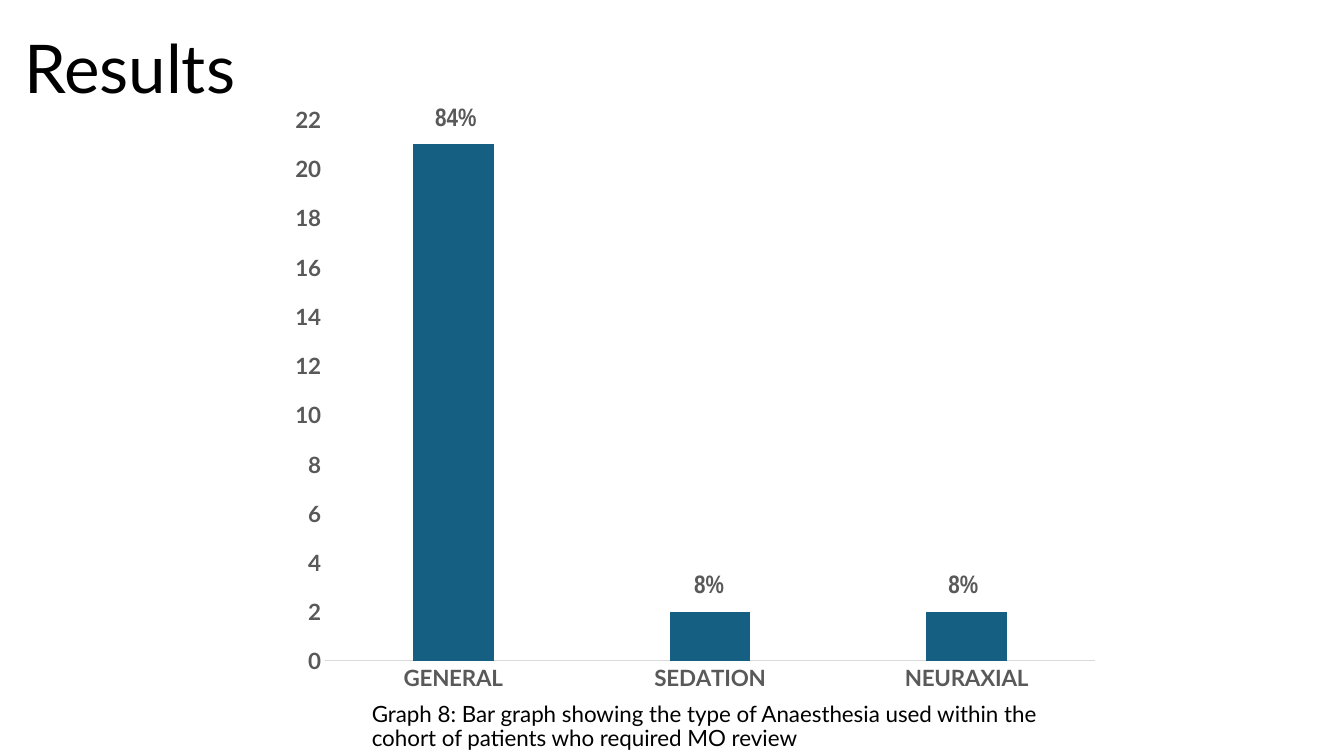
from lxml import etree
from pptx import Presentation
from pptx.chart.data import CategoryChartData
from pptx.dml.color import RGBColor
from pptx.enum.chart import XL_CHART_TYPE as CHART, XL_TICK_MARK as TICK
from pptx.enum.text import MSO_ANCHOR as ANCHOR, MSO_AUTO_SIZE as FIT, PP_ALIGN as ALIGN
from pptx.oxml import parse_xml
from pptx.util import Pt

GREY = "595959"
C_NS = "http://schemas.openxmlformats.org/drawingml/2006/chart"


def rgb(value):
    return RGBColor.from_string(value)


def style(font, size, color, name="Lato", bold=False):
    font.name = name
    font.size = Pt(size)
    font.bold = bold
    font.color.rgb = rgb(color)


def place(sp, x, y, w, h):
    sp.left, sp.top, sp.width, sp.height = Pt(x), Pt(y), Pt(w), Pt(h)


def write(sp, text, size, color, name="Lato", bold=False, anchor=ANCHOR.TOP, spacing=1.0):
    tf = sp.text_frame
    tf.word_wrap = True
    tf.auto_size = FIT.NONE
    tf.vertical_anchor = anchor
    p = tf.paragraphs[0]
    p.alignment = ALIGN.LEFT
    p.line_spacing = spacing
    r = p.add_run()
    r.text = text
    style(r.font, size, color, name, bold)


def add_title(s, x, y, w, h):
    sp = s.shapes.title
    place(sp, x, y, w, h)
    write(sp, "Results", 48, "000000", anchor=ANCHOR.BOTTOM, spacing=0.9)


def add_caption(s, x, y, w, h):
    sp = s.shapes.add_textbox(Pt(x), Pt(y), Pt(w), Pt(h))
    text = ("Graph 8: Bar graph showing the type of Anaesthesia used within the "
            "cohort of patients who required MO review")
    write(sp, text, 16, "000000", anchor=ANCHOR.BOTTOM, spacing=0.9)


def fix_plot_area(chart, x, y, w, h):
    plot_area = chart.plots[0]._element.getparent()
    for old in plot_area.findall(f"{{{C_NS}}}layout"):
        plot_area.remove(old)
    layout = parse_xml(f'<c:layout xmlns:c="{C_NS}"><c:manualLayout/></c:layout>')
    settings = [("layoutTarget", "inner"), ("xMode", "edge"), ("yMode", "edge"),
                ("x", x), ("y", y), ("w", w), ("h", h)]
    for tag, val in settings:
        etree.SubElement(layout[0], f"{{{C_NS}}}{tag}").set("val", str(val))
    plot_area.insert(0, layout)


def add_anaesthesia_chart(s, x, y, w, h):
    data = CategoryChartData()
    data.categories = ["GENERAL", "SEDATION", "NEURAXIAL"]
    data.add_series("Series 1", (21, 2, 2))
    chart = s.shapes.add_chart(CHART.COLUMN_CLUSTERED, Pt(x), Pt(y), Pt(w), Pt(h), data).chart
    chart.has_legend = False
    chart.has_title = False
    style(chart.font, 10, "000000")

    plot = chart.plots[0]
    plot.gap_width = 219
    plot.overlap = -27
    plot.vary_by_categories = False
    fill = plot.series[0].format.fill
    fill.solid()
    fill.fore_color.rgb = rgb("156082")

    cat_axis, val_axis = chart.category_axis, chart.value_axis
    for axis in (cat_axis, val_axis):
        axis.major_tick_mark = axis.minor_tick_mark = TICK.NONE
        axis.has_major_gridlines = False
        style(axis.tick_labels.font, 16, GREY, bold=True)
    cat_axis.format.line.color.rgb = rgb("D9D9D9")
    cat_axis.format.line.width = Pt(0.75)
    val_axis.format.line.fill.background()
    val_axis.minimum_scale, val_axis.maximum_scale = 0, 22
    val_axis.major_unit = 2
    fix_plot_area(chart, 0.055, 0.041, 0.925, 0.889)

    for text, dx, dy in (("84%", 104.4, 1.4), ("8%", 289.4, 334.8), ("8%", 470.9, 334.8)):
        sp = s.shapes.add_textbox(Pt(x + dx), Pt(y + dy), Pt(52.6), Pt(30.2))
        write(sp, text, 18, GREY, "Arial Narrow", True)


def main():
    prs = Presentation()
    prs.slide_width, prs.slide_height = Pt(960), Pt(540)
    s = prs.slides.add_slide(prs.slide_layouts[5])
    add_title(s, 10.1, -13, 727.2, 93.6)
    add_caption(s, 258.5, 488.2, 497.5, 51.8)
    add_anaesthesia_chart(s, 199.4, 67.7, 594.7, 434.9)
    prs.save("out.pptx")


if __name__ == "__main__":
    main()
